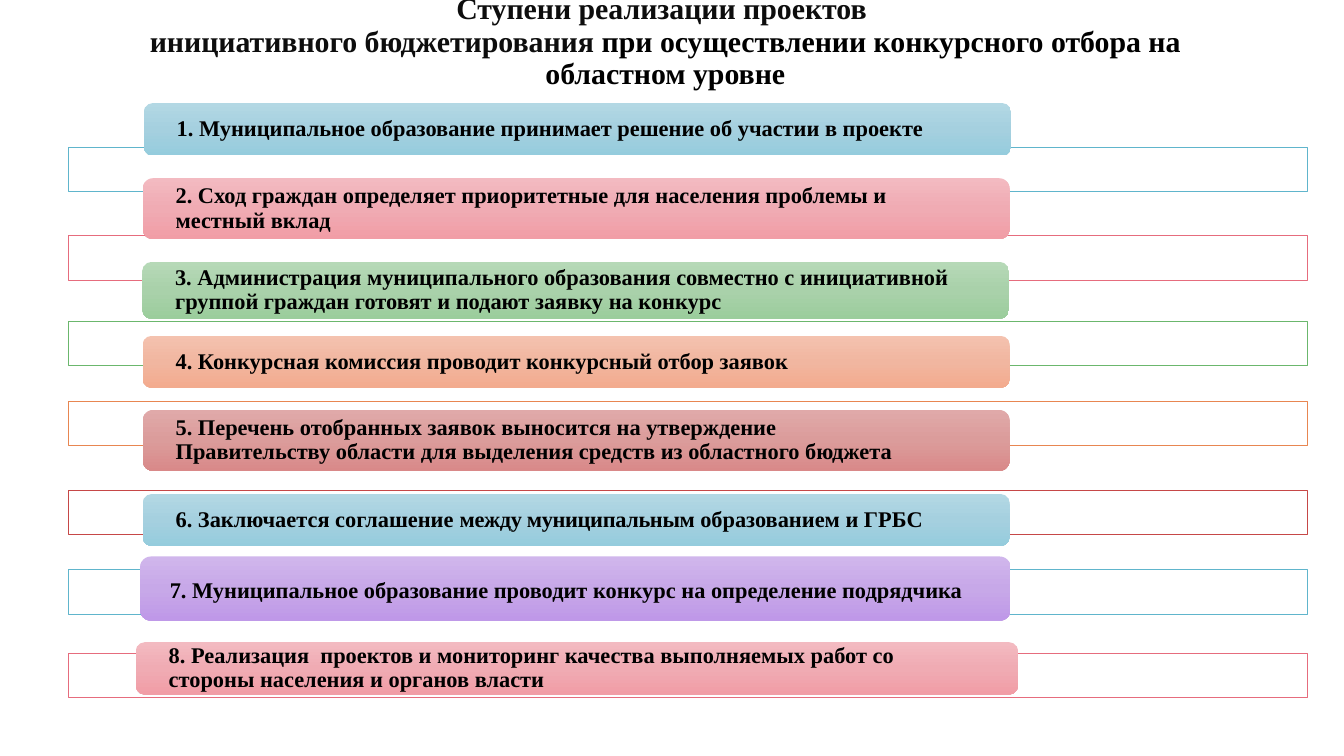
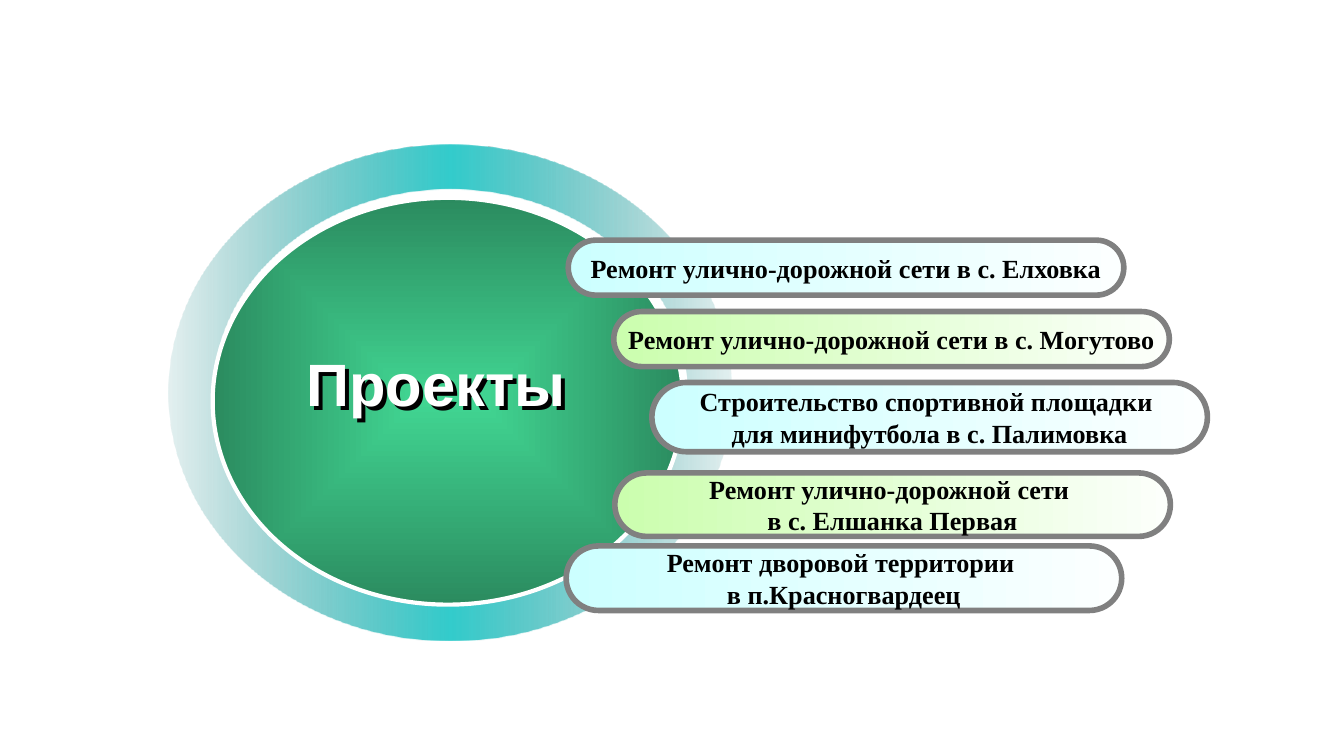
from copy import deepcopy

from pptx import Presentation
from pptx.dml.color import RGBColor
from pptx.enum.shapes import MSO_SHAPE as SHAPE
from pptx.enum.text import MSO_ANCHOR as ANCHOR, MSO_AUTO_SIZE as AUTO, PP_ALIGN as ALIGN
from pptx.oxml import parse_xml
from pptx.oxml.ns import nsdecls
from pptx.util import Cm, Pt

SERIF = "Times New Roman"
BLACK, WHITE, GREY = "000000", "FFFFFF", "808080"
INSET = (0.25, 0.13, 0.25, 0.13)
CARD_INSET = (0.57, 0, 0.57, 0)
CARD_EDGE = 0.05

# line colour of the bar, then the gradient of the card
BLUE = ("60B5CC", ("B3D8E4", "A5D0DF", "95CCDD"))
PINK = ("E66C7D", ("F3BAC1", "F0ABB3", "F19DA6"))
GREEN = ("6BB76D", ("B6D9B7", "A9D1AA", "9BCD9C"))
ORANGE = ("E88651", ("F4C2AF", "F1B6A0", "F3AB8E"))
RED = ("C64847", ("E0A9A9", "DB9C9B", "D98989"))
PURPLE = ("D0B6EC", "C7A8E8", "BF98E8")

# text, palette, bar top, card box
STEPS = [
    ("1. Муниципальное образование принимает решение об участии в проекте",
     BLUE, 2.78, (2.72, 1.95, 16.39, 0.99)),
    ("2. Сход граждан определяет приоритетные для населения проблемы и местный вклад",
     PINK, 4.46, (2.7, 3.37, 16.38, 1.15)),
    ("3. Администрация муниципального образования совместно с инициативной "
     "группой граждан готовят и подают заявку на конкурс",
     GREEN, 6.07, (2.69, 4.95, 16.38, 1.08)),
    ("4. Конкурсная комиссия проводит конкурсный отбор заявок",
     ORANGE, 7.59, (2.7, 6.35, 16.38, 0.98)),
    ("5. Перечень отобранных заявок выносится на утверждение \v"
     "Правительству области для выделения средств из областного бюджета",
     RED, 9.27, (2.7, 7.75, 16.38, 1.15)),
    ("6. Заключается соглашение ",
     BLUE, 10.77, (2.7, 9.34, 16.38, 0.98)),
    ("8. Реализация  проектов и мониторинг качества выполняемых работ со "
     "стороны населения и органов власти",
     PINK, 12.35, (2.57, 12.14, 16.67, 0.99)),
]

PILL_FILLS = [("CCFFFF", "FCFFFF"), ("CBFEAE", "FCFFFB")]
PROJECTS = [
    ("Ремонт улично-дорожной сети в с. Елховка", (10.74, 4.54, 10.5, 1.04)),
    ("Ремонт улично-дорожной сети в с. Могутово", (11.6, 5.89, 10.5, 1.04)),
    ("Строительство спортивной площадки \nдля минифутбола в с. Палимовка",
     (12.32, 7.23, 10.5, 1.31)),
    ("Ремонт улично-дорожной сети \nв с. Елшанка Первая", (11.62, 8.94, 10.5, 1.2)),
    ("Ремонт дворовой территории \nв п.Красногвардеец", (10.7, 10.32, 10.5, 1.22)),
]


def rgb(value):
    return RGBColor.from_string(value)


def color_xml(value, alpha=100):
    return f'<a:srgbClr val="{value}"><a:alpha val="{alpha * 1000}"/></a:srgbClr>'


def paint(shape, xml):
    """Replace the fill of the shape with the given fill element."""
    shape.fill.background()
    spPr = shape._element.spPr
    spPr.replace(spPr.find("{*}noFill"), parse_xml(xml))


def solid(shape, color, alpha=100):
    paint(shape, f'<a:solidFill {nsdecls("a")}>{color_xml(color, alpha)}</a:solidFill>')


def gradient(shape, colors, angle=0, alphas=None, radial=False):
    """Spread the colours evenly along an angle, or outwards from the centre."""
    alphas = alphas or [100] * len(colors)
    last = len(colors) - 1
    stops = "".join(f'<a:gs pos="{100000 * i // last}">{color_xml(c, a)}</a:gs>'
                    for i, (c, a) in enumerate(zip(colors, alphas)))
    way = f'<a:lin ang="{angle * 60000}" scaled="0"/>'
    if radial:
        way = ('<a:path path="shape"><a:fillToRect l="50000" t="50000" '
               'r="50000" b="50000"/></a:path>')
    paint(shape, f'<a:gradFill {nsdecls("a")} rotWithShape="1">'
                 f'<a:gsLst>{stops}</a:gsLst>{way}</a:gradFill>')


def add_shape(s, kind, box, line=None, width=1, adj=None):
    sp = s.shapes.add_shape(kind, *map(Cm, box))
    sp.shadow.inherit = False
    if line:
        sp.line.color.rgb = rgb(line)
        sp.line.width = Pt(width)
    else:
        sp.line.fill.background()
    if adj is not None:
        sp.adjustments[0] = adj
    return sp


def add_run(p, text, size=12, font=SERIF, color=BLACK, tracking=None):
    """Add formatted text to the paragraph, with a line break at each \\v."""
    for i, part in enumerate(text.split("\v")):
        if i:
            p.add_line_break()
            p._p[-1].append(deepcopy(r.font._element))
        r = p.add_run()
        r.text = part
        r.font.size, r.font.name, r.font.bold = Pt(size), font, True
        r.font.color.rgb = rgb(color)
        if tracking is not None:
            r.font._element.set("spc", str(tracking))


def write(shape, text, align=ALIGN.LEFT, anchor=ANCHOR.MIDDLE, inset=INSET,
          wrap=True, spacing=None, **font):
    """Fill the shape with one paragraph per line; return the last paragraph."""
    tf = shape.text_frame
    tf.word_wrap, tf.vertical_anchor = wrap, anchor
    tf.margin_left, tf.margin_top, tf.margin_right, tf.margin_bottom = map(Cm, inset)
    for i, line in enumerate(text.split("\n")):
        p = tf.add_paragraph() if i else tf.paragraphs[0]
        p.alignment, p.line_spacing = align, spacing
        add_run(p, line, **font)
    return p


def add_text(s, box, text, **fmt):
    tb = s.shapes.add_textbox(*map(Cm, box))
    return tb, write(tb, text, **fmt)


def add_card(s, box, fill, text, text_box=None):
    card = add_shape(s, SHAPE.ROUNDED_RECTANGLE, box)
    gradient(card, fill, 90)
    x, y, w, h = box
    inner = (x + CARD_EDGE, y + CARD_EDGE, w - 2 * CARD_EDGE, h - 2 * CARD_EDGE)
    _, p = add_text(s, text_box or inner, text, inset=CARD_INSET, spacing=0.9)
    return p


def add_shadow(shape):
    shape._element.spPr.append(parse_xml(
        f'<a:effectLst {nsdecls("a")}><a:outerShdw dist="35921" dir="2700000" '
        f'algn="ctr" rotWithShape="0">{color_xml(BLACK)}</a:outerShdw></a:effectLst>'))


def steps_slide(s):
    _, p = add_text(s, (1.5, 0.15, 22.15, 2.01),
                    "Ступени реализации проектов \vинициативного бюджетирования ",
                    align=ALIGN.CENTER, inset=(0.25, 0.13, 0.25, 0.83),
                    spacing=0.9, size=16, color="0D0D0D")
    add_run(p, "при осуществлении конкурсного отбора на областном уровне", size=16)
    for text, (line, fill), bar_top, box in STEPS:
        bar = add_shape(s, SHAPE.RECTANGLE, (1.3, bar_top, 23.41, 0.84), line, 0.5)
        solid(bar, WHITE, 90)
        p = add_card(s, box, fill, text)
        if text.startswith("6."):
            add_run(p, "между муниципальным ", tracking=-20)
            add_run(p, "образованием и ГРБС", tracking=0)
    add_card(s, (2.65, 10.52, 16.45, 1.21), PURPLE,
             "7. Муниципальное образование проводит конкурс на определение подрядчика",
             text_box=(2.64, 10.64, 16.26, 1.09))


def projects_slide(s):
    ring = add_shape(s, SHAPE.DONUT, (3.18, 2.73, 10.64, 9.38), adj=0.09)
    gradient(ring, ("228888", "33CCCC", "228888"), alphas=(12, 100, 12))
    disc = add_shape(s, SHAPE.OVAL, (4.02, 3.74, 8.89, 7.69), WHITE, 2.25)
    gradient(disc, ("41D592", "2B8B5F"), radial=True)
    for i, (text, box) in enumerate(PROJECTS):
        pill = add_shape(s, SHAPE.ROUNDED_RECTANGLE, box, GREY, 3, adj=0.5)
        gradient(pill, PILL_FILLS[i % 2])
        write(pill, text, align=ALIGN.CENTER, wrap=False, size=14)
    tb, _ = add_text(s, (5.52, 6.43, 5.77, 1.63), "Проекты ", align=ALIGN.CENTER,
                     anchor=ANCHOR.TOP, wrap=False, size=32, font="Arial", color=WHITE)
    tb.text_frame.auto_size = AUTO.SHAPE_TO_FIT_TEXT
    add_shadow(tb)


def main():
    prs = Presentation()
    prs.slide_width, prs.slide_height = Cm(25.4), Cm(14.29)
    for build in (steps_slide, projects_slide):
        build(prs.slides.add_slide(prs.slide_layouts[6]))
    prs.save("out.pptx")


if __name__ == "__main__":
    main()
